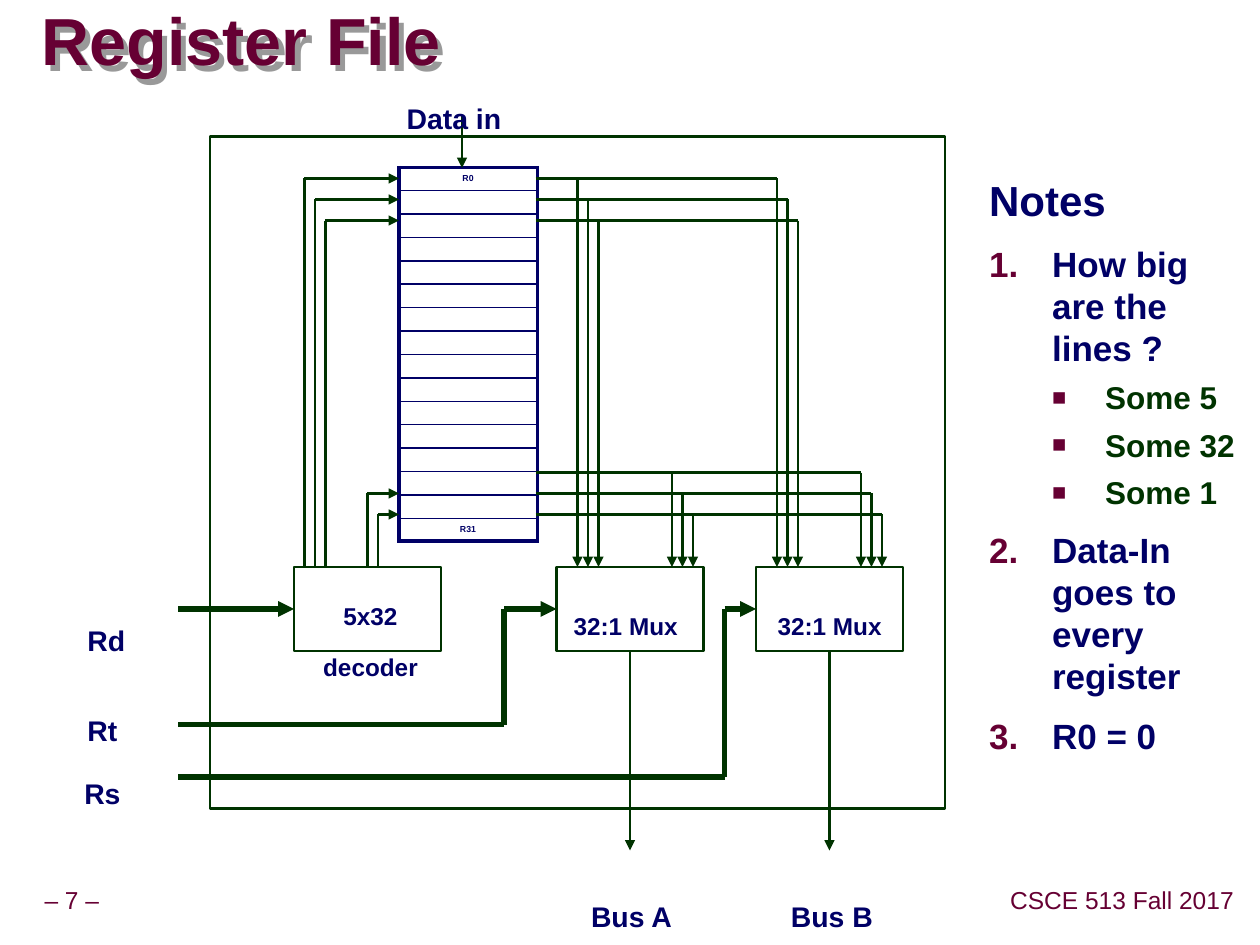
"""Build the register file slide with its datapath diagram and notes."""
from lxml.etree import SubElement
from pptx import Presentation
from pptx.dml.color import RGBColor
from pptx.enum.shapes import MSO_CONNECTOR as CONNECTOR, MSO_SHAPE as SHAPE
from pptx.enum.text import MSO_ANCHOR as ANCHOR, PP_ALIGN as ALIGN
from pptx.oxml import parse_xml
from pptx.oxml.ns import nsdecls, qn
from pptx.util import Cm, Pt

GRID = 2.54 / 12
NAVY, GREEN, MAROON = "000066", "003300", "660033"
color = RGBColor.from_string


def add_run(paragraph, text, size, hex_color, bold=True, lowered=False):
    run = paragraph.add_run()
    run.text = text
    run.font.name = "Arial"
    run.font.size = Pt(size)
    run.font.bold = bold
    run.font.color.rgb = color(hex_color)
    if lowered:
        run.font._element.set("baseline", "-25000")


def add_wire(x1, y1, x2, y2, width=1.5, arrow=False):
    wire = slide.shapes.add_connector(
        CONNECTOR.STRAIGHT, *[Cm(value * GRID) for value in (x1, y1, x2, y2)])
    wire.line.color.rgb = color(GREEN)
    wire.line.width = Pt(width)
    if arrow:
        SubElement(wire.line._get_or_add_ln(), qn("a:tailEnd"), type="triangle")
    SubElement(wire._element.spPr, qn("a:effectLst"))
    return wire


presentation = Presentation()
presentation.slide_width = Cm(25.4)
presentation.slide_height = Cm(19.05)
slide = presentation.slides.add_slide(presentation.slide_layouts[6])

title = slide.shapes.add_textbox(Cm(0.84), Cm(0.2), Cm(24.21), Cm(1.42))
frame = title.text_frame
frame.word_wrap = True
frame.vertical_anchor = ANCHOR.MIDDLE
frame.margin_left = frame.margin_right = frame.margin_top = frame.margin_bottom = 0
frame.paragraphs[0].line_spacing = 0.87
add_run(frame.paragraphs[0], "Register File", 38, MAROON)
title._element.spPr.append(parse_xml(
    f'<a:effectLst {nsdecls("a")}><a:outerShdw dist="53900" dir="2700000">'
    '<a:srgbClr val="999999"/></a:outerShdw></a:effectLst>'))

blocks = []
for left, top, width, height in [
        (20, 13, 70, 64), (28, 54, 14, 8), (53, 54, 14, 8), (72, 54, 14, 8)]:
    block = slide.shapes.add_shape(
        SHAPE.RECTANGLE, *[Cm(value * GRID) for value in (left, top, width, height)])
    block.shadow.inherit = False
    block.fill.background()
    block.line.color.rgb = color(GREEN)
    block.line.width = Pt(1.5)
    blocks.append(block)
decoder, mux_a, mux_b = blocks[1:]

row_count = 16
graphic = slide.shapes.add_table(row_count, 1, Cm(8.04), Cm(3.38), Cm(2.79), Cm(7.28))
registers = graphic.table
registers.first_row = registers.horz_banding = False
labels = {0: "R0", row_count - 1: "R31"}
for index, row in enumerate(registers.rows):
    row.height = Cm(7.28 / row_count)
    cell = row.cells[0]
    cell.margin_left = cell.margin_right = cell.margin_top = cell.margin_bottom = Cm(0.13)
    cell.fill.background()
    paragraph = cell.text_frame.paragraphs[0]
    paragraph.alignment = ALIGN.CENTER
    paragraph.line_spacing = 0.95
    if index in labels:
        add_run(paragraph, labels[index], 5, NAVY)
    else:
        SubElement(paragraph._p, qn("a:endParaRPr"), sz="500")
    top_width = 2.25 if index == 0 else 1
    bottom_width = 2.25 if index == row_count - 1 else 1
    borders = [("L", 2.25), ("R", 2.25), ("T", top_width), ("B", bottom_width)]
    for position, (side, width) in enumerate(borders):
        cell._tc.get_or_add_tcPr().insert(position, parse_xml(
            f'<a:ln{side} {nsdecls("a")} w="{Pt(width)}"><a:solidFill>'
            f'<a:srgbClr val="{NAVY}"/></a:solidFill></a:ln{side}>'))

for first_a, first_b, first_y in [(55, 74, 17), (64, 82, 45)]:
    for step in range(3):
        y = first_y + 2 * step
        add_wire(51, y, first_b + step, y)
        for x in (first_a + step, first_b + step):
            add_wire(x, y, x, 54, arrow=True)

for x, y in [(29, 17), (30, 19), (31, 21), (35, 47), (36, 49)]:
    add_wire(x, 54, x, y)
    add_wire(x, y, 38, y, arrow=True)

for x, y in [(48, 69), (69, 74)]:
    add_wire(17, y, x, y, 3)
    add_wire(x, y, x, 58, 3)
for start, end, block in [(17, 28, decoder), (48, 53, mux_a), (69, 72, mux_b)]:
    add_wire(start, 58, end, 58, 3, arrow=True).end_connect(block, 1)
for x, mux in [(60, mux_a), (79, mux_b)]:
    add_wire(x, 62, x, 81, arrow=True).begin_connect(mux, 2)
add_wire(44, 11, 44, 16, arrow=True)

for lines, left, top, width, height, size, wrap in [
        (["5x32", "decoder"], 6.25, 11.43, 2.44, 1.47, 24, False),
        (["32:1 Mux"], 11.28, 11.63, 2.67, 0.86, 24, False),
        (["32:1 Mux"], 15.39, 11.63, 2.67, 0.86, 24, False),
        (["Rd"], 1.55, 11.79, 1.19, 0.99, 28, True),
        (["Rt"], 1.47, 13.61, 1.19, 0.99, 28, True),
        (["Rs"], 1.47, 14.88, 1.19, 0.99, 28, True),
        (["Data in"], 7.7, 1.27, 2.9, 0.99, 28, True),
        (["Bus A"], 11.28, 17.35, 2.9, 0.99, 28, True),
        (["Bus B"], 15.32, 17.35, 2.9, 0.99, 28, True),
        (["– 7 –"], 0.61, 17.78, 1.68, 0.79, 14, False),
        (["CSCE 513 Fall 2017"], 20.22, 17.78, 4.8, 0.79, 14, False)]:
    label = slide.shapes.add_textbox(Cm(left), Cm(top), Cm(width), Cm(height))
    frame = label.text_frame
    frame.word_wrap = wrap
    frame.margin_left = frame.margin_right = frame.margin_top = frame.margin_bottom = Cm(0.13)
    footer = size == 14
    if footer:
        frame.vertical_anchor = ANCHOR.MIDDLE
    for index, line in enumerate(lines):
        paragraph = frame.add_paragraph() if index else frame.paragraphs[0]
        paragraph.alignment = ALIGN.CENTER
        paragraph.line_spacing = 0.9
        add_run(paragraph, line, size, MAROON if footer else NAVY, not footer, not footer)

notes = slide.shapes.add_textbox(Cm(19.69), Cm(3.4), Cm(5.71), Cm(9.93))
frame = notes.text_frame
frame.word_wrap = True
for index, (text, kind) in enumerate([
        ("Notes", "heading"), ("How big are the lines ?", "number"),
        ("Some 5", "square"), ("Some 32", "square"), ("Some 1", "square"),
        ("Data-In goes to every register", "number"), ("R0 = 0", "number")]):
    paragraph = frame.add_paragraph() if index else frame.paragraphs[0]
    square = kind == "square"
    if square:
        paragraph.level = 1
    if index:
        paragraph.space_before = Pt(5.5 if square else 10)
    properties = paragraph._p.get_or_add_pPr()
    properties.set("marL", str(Cm(2.34 if square else 1.27)))
    properties.set("indent", str(-Cm(1.07 if square else 1.27)))
    if kind != "heading":
        bullet_color = SubElement(properties, qn("a:buClr"))
        SubElement(bullet_color, qn("a:srgbClr"), val=MAROON)
    if square:
        SubElement(properties, qn("a:buSzPct"), val="75000")
        SubElement(properties, qn("a:buFont"), typeface="Arial")
        SubElement(properties, qn("a:buChar"), char="■")
    elif kind == "number":
        SubElement(properties, qn("a:buFont"), typeface="Arial")
        SubElement(properties, qn("a:buAutoNum"), type="arabicPeriod")
    size = {"heading": 24, "number": 20, "square": 18}[kind]
    add_run(paragraph, text, size, GREEN if square else NAVY)

presentation.save("out.pptx")
